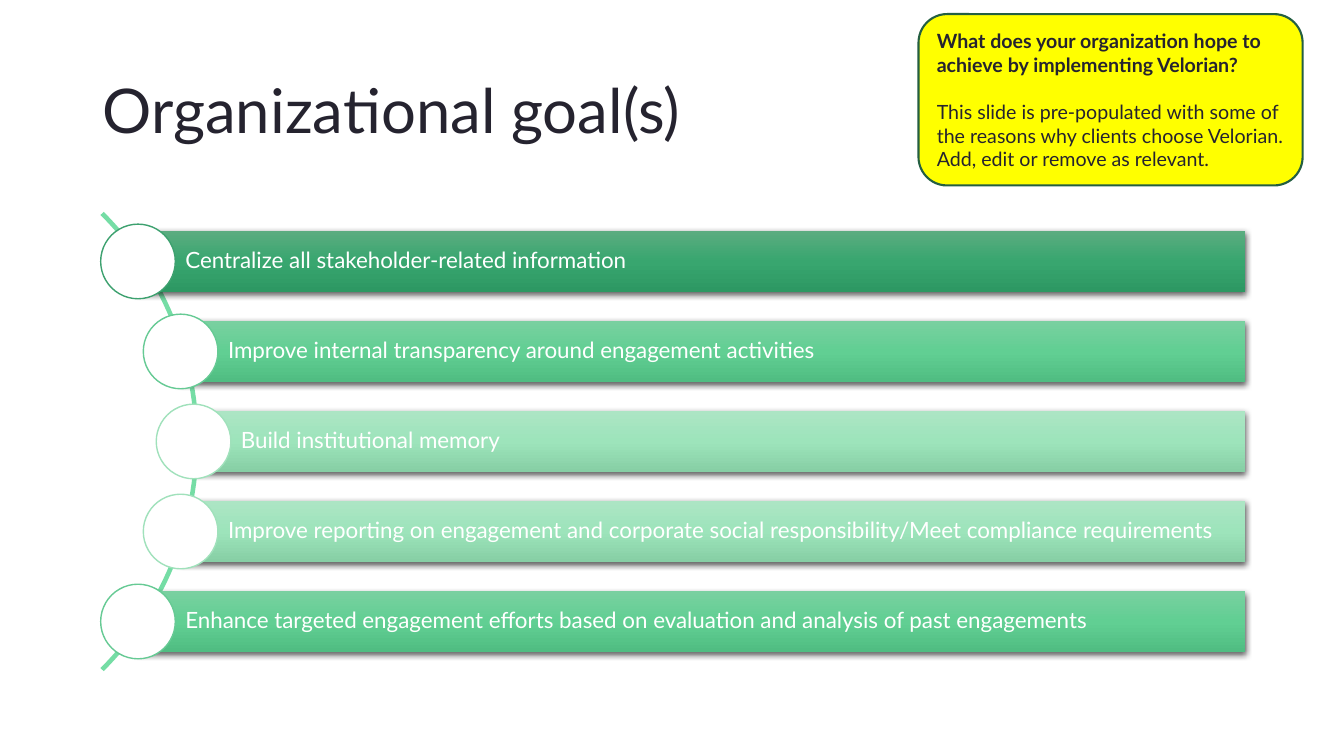
import math

from lxml import etree
from pptx import Presentation
from pptx.dml.color import RGBColor
from pptx.enum.shapes import MSO_SHAPE
from pptx.enum.text import MSO_ANCHOR, MSO_AUTO_SIZE, PP_ALIGN
from pptx.oxml.ns import qn
from pptx.util import Inches, Pt

RECTANGLE = MSO_SHAPE.RECTANGLE
OVAL = MSO_SHAPE.OVAL
ROUNDED = MSO_SHAPE.ROUNDED_RECTANGLE
MIDDLE = MSO_ANCHOR.MIDDLE
LEFT = PP_ALIGN.LEFT
NO_FIT = MSO_AUTO_SIZE.NONE

FONT = "Lato"
COLORS = {
    "ink": "25232F",
    "white": "FFFFFF",
    "arc": "75DDA5",
    "note": "FFFF00",
    "note_line": "245F42",
    "shadow": "000000",
}

# Gradient stops from top to bottom, and the circle outline
TONES = {
    "dark": (("5BAC80", "38A66F", "2D9863"), "3DA16F"),
    "medium": (("79D0A0", "61CF93", "50BD82"), "66CA94"),
    "light": (("ACE5C4", "9DE4BB", "87CFA5"), "A0E1BB"),
}

GOALS = [
    ("Centralize all stakeholder-related information", "dark"),
    ("Improve internal transparency around engagement activities", "medium"),
    ("Build institutional memory", "light"),
    ("Improve reporting on engagement and corporate social responsibility/"
     "Meet compliance requirements", "light"),
    ("Enhance targeted engagement efforts based on evaluation and analysis "
     "of past engagements", "medium"),
]

# Geometry of the goal list, in inches
ROW_PITCH = 0.893
BAR_HEIGHT = 0.6
BAR_RIGHT = 12.35
CIRCLE_SIZE = 0.74
ARC_X, ARC_Y, ARC_RADIUS = -1.25, 4.38, 3.2
CIRCLE_RADIUS = 3.17
ARC_STEPS = 60


def color(value):
    return RGBColor.from_string(value)


def format_runs(paragraph, size, ink, bold=False):
    paragraph.alignment = LEFT
    for run in paragraph.runs:
        run.font.name = FONT
        run.font.size = Pt(size)
        run.font.bold = bold
        run.font.color.rgb = color(ink)


def add_box(slide, kind, left, top, width, height):
    shape = slide.shapes.add_shape(
        kind, Inches(left), Inches(top), Inches(width), Inches(height))
    shape.shadow.inherit = False
    return shape


def paint(shape, fill, line, width):
    shape.fill.solid()
    shape.fill.fore_color.rgb = color(fill)
    shape.line.color.rgb = color(line)
    shape.line.width = Pt(width)


def add_color(parent, value):
    return etree.SubElement(parent, qn("a:srgbClr"), val=value)


def paint_gradient(shape, stops):
    """Vertical gradient with evenly spaced stops."""
    shape.fill.gradient()
    shape.fill.gradient_angle = 270
    stop_list = shape._element.spPr.find(".//" + qn("a:gsLst"))
    for stop in list(stop_list):
        stop_list.remove(stop)
    for index, value in enumerate(stops):
        position = 100000 * index // (len(stops) - 1)
        add_color(etree.SubElement(stop_list, qn("a:gs"), pos=str(position)), value)


def add_shadow(shape):
    effects = shape._element.spPr.find(qn("a:effectLst"))
    shadow = etree.SubElement(
        effects, qn("a:outerShdw"), blurRad=str(Pt(4.5)), dist=str(Pt(1.5)),
        dir="5400000", algn="ctr", rotWithShape="0")
    etree.SubElement(add_color(shadow, COLORS["shadow"]), qn("a:alpha"), val="63000")


def add_title(slide, text):
    title = slide.shapes.title
    title.left, title.top = Inches(0.92), Inches(0.4)
    title.width, title.height = Inches(11.5), Inches(1.45)
    frame = title.text_frame
    frame.text = text
    frame.vertical_anchor = MIDDLE
    frame.auto_size = NO_FIT
    frame.paragraphs[0].line_spacing = 0.9
    format_runs(frame.paragraphs[0], 44, COLORS["ink"])


def add_arc(slide):
    """Quarter circle that links the goals."""
    angles = [math.radians(-45 + 90 * step / ARC_STEPS)
              for step in range(ARC_STEPS + 1)]
    points = [(Inches(ARC_X + ARC_RADIUS * math.cos(angle)),
               Inches(ARC_Y + ARC_RADIUS * math.sin(angle))) for angle in angles]
    builder = slide.shapes.build_freeform(*points[0])
    builder.add_line_segments(points[1:], close=False)
    arc = builder.convert_to_shape()
    arc.shadow.inherit = False
    arc.fill.background()
    arc.line.color.rgb = color(COLORS["arc"])
    arc.line.width = Pt(3.25)


def add_goal(slide, row, text, tone):
    """Bar with its text, and a circle centred on the bar's left end."""
    stops, outline = TONES[tone]
    offset = (row - (len(GOALS) - 1) / 2) * ROW_PITCH
    middle = ARC_Y + offset
    left = ARC_X + math.sqrt(CIRCLE_RADIUS ** 2 - offset ** 2)

    bar = add_box(slide, RECTANGLE, left, middle - BAR_HEIGHT / 2,
                  BAR_RIGHT - left, BAR_HEIGHT)
    paint_gradient(bar, stops)
    bar.line.fill.background()
    add_shadow(bar)
    frame = bar.text_frame
    frame.text = text
    frame.word_wrap = True
    frame.vertical_anchor = MIDDLE
    frame.margin_left = Inches(0.47)
    frame.margin_right = frame.margin_top = frame.margin_bottom = Inches(0.04)
    frame.paragraphs[0].line_spacing = 0.9
    format_runs(frame.paragraphs[0], 16, COLORS["white"])

    circle = add_box(slide, OVAL, left - CIRCLE_SIZE / 2,
                     middle - CIRCLE_SIZE / 2, CIRCLE_SIZE, CIRCLE_SIZE)
    paint(circle, COLORS["white"], outline, 1)


def add_note(slide, question, *remarks):
    note = add_box(slide, ROUNDED, 9.11, 0.14, 3.81, 1.7)
    paint(note, COLORS["note"], COLORS["note_line"], 1.5)
    frame = note.text_frame
    frame.text = "\n".join((question, *remarks))
    frame.word_wrap = True
    frame.vertical_anchor = MIDDLE
    for index, paragraph in enumerate(frame.paragraphs):
        format_runs(paragraph, 14, COLORS["ink"], bold=index == 0)
    frame.paragraphs[0].space_after = Pt(17)


def main():
    presentation = Presentation()
    presentation.slide_width = Inches(13.33)
    presentation.slide_height = Inches(7.5)
    slide = presentation.slides.add_slide(presentation.slide_layouts[5])

    add_title(slide, "Organizational goal(s)")

    # Goals along the arc
    add_arc(slide)
    for row, (text, tone) in enumerate(GOALS):
        add_goal(slide, row, text, tone)

    # Guidance note
    add_note(
        slide,
        "What does your organization hope to achieve by implementing Velorian?",
        "This slide is pre-populated with some of the reasons why clients "
        "choose Velorian.",
        "Add, edit or remove as relevant.")

    presentation.save("out.pptx")


if __name__ == "__main__":
    main()
